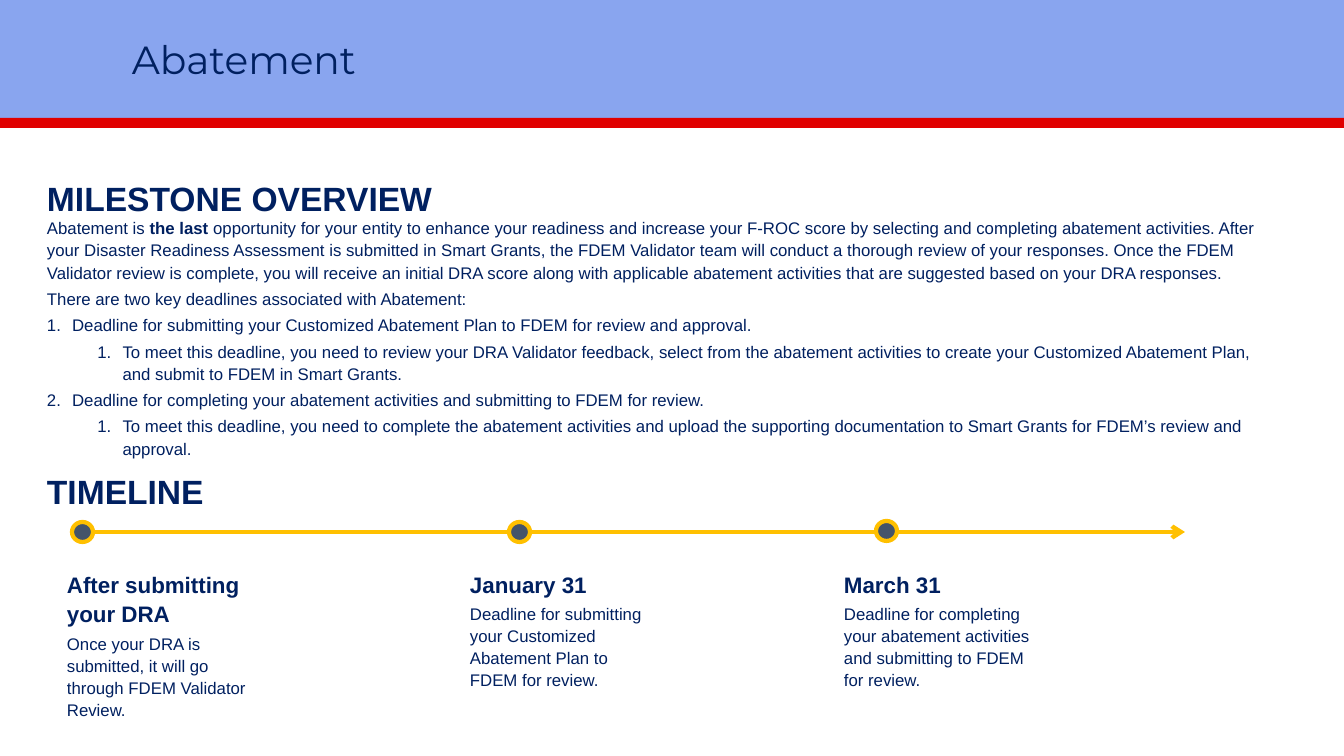
from lxml import etree
from pptx import Presentation
from pptx.dml.color import RGBColor
from pptx.enum.shapes import MSO_CONNECTOR, MSO_SHAPE
from pptx.enum.text import MSO_ANCHOR
from pptx.oxml.ns import qn
from pptx.util import Emu, Pt

RECT, OVAL = MSO_SHAPE.RECTANGLE, MSO_SHAPE.OVAL
LINE = MSO_CONNECTOR.STRAIGHT
MIDDLE = MSO_ANCHOR.MIDDLE
SCALE = 914400 / 100.8
INDENT = 228600
WIDE, HIGH = 1344, 756
COLORS = {"band": "89A5EF", "red": "E00000", "navy": "002060",
          "gold": "FFC000", "slate": "44546A"}

INTRO = [
    "Abatement is ",
    "the last ",
    "opportunity for your entity to enhance your readiness and increase your "
    "F-ROC score by selecting and completing abatement activities. After your "
    "Disaster Readiness Assessment is submitted in Smart Grants, the FDEM "
    "Validator team will conduct a thorough review of your responses. Once the "
    "FDEM Validator review is complete, you will receive an initial DRA score "
    "along with applicable abatement activities that are suggested based on "
    "your DRA responses.",
]
LEAD = "There are two key deadlines associated with Abatement:"
STEPS = [
    (0, "Deadline for submitting your Customized Abatement Plan to FDEM for "
        "review and approval."),
    (1, "To meet this deadline, you need to review your DRA Validator feedback, "
        "select from the abatement activities to create your Customized "
        "Abatement Plan, and submit to FDEM in Smart Grants."),
    (0, "Deadline for completing your abatement activities and submitting to "
        "FDEM for review."),
    (1, "To meet this deadline, you need to complete the abatement activities "
        "and upload the supporting documentation to Smart Grants for FDEM’s "
        "review and approval."),
]
# dot left, dot top, text left, text height, heading, detail
EVENTS = [
    (72, 522, 67, 152, "After submitting your DRA",
     "Once your DRA is submitted, it will go through FDEM Validator Review."),
    (509, 522, 470, 122, "January 31",
     "Deadline for submitting your Customized Abatement Plan to FDEM for review."),
    (876, 521, 844, 122, "March 31",
     "Deadline for completing your abatement activities and submitting to FDEM "
     "for review."),
]


def px(*values):
    return [Emu(round(v * SCALE)) for v in values]


def color(name):
    return RGBColor.from_string(COLORS[name])


def add_shape(slide, kind, box, fill, edge=None):
    shape = slide.shapes.add_shape(kind, *px(*box))
    shape.shadow.inherit = False
    shape.fill.solid()
    shape.fill.fore_color.rgb = color(fill)
    if edge:
        shape.line.color.rgb = color(edge)
        shape.line.width = Pt(3)
    else:
        shape.line.fill.background()


def add_frame(slide, box):
    """Add a wrapping text box without insets and return its frame."""
    frame = slide.shapes.add_textbox(*px(*box)).text_frame
    frame.word_wrap = True
    frame.margin_left = frame.margin_right = 0
    frame.margin_top = frame.margin_bottom = 0
    return frame


def style(para, size, bold=False, after=3, lead=1.1, face="Arial"):
    para.line_spacing = lead
    para.space_after = Pt(after)
    for run in para.runs:
        run.font.name = face
        run.font.size = Pt(size)
        run.font.bold = bold
        run.font.color.rgb = color("navy")


def number(para, level):
    """Turn a paragraph into an item of a numbered list."""
    para.level = level
    props = para._p.get_or_add_pPr()
    props.set("marL", str(INDENT * (1 + 2 * level)))
    props.set("indent", str(-INDENT))
    etree.SubElement(props, qn("a:buAutoNum"), type="arabicPeriod")


def add_title(slide, text):
    box = slide.shapes.add_textbox(*px(122, 22, 1159, 80))
    frame = box.text_frame
    frame.word_wrap = True
    frame.vertical_anchor = MIDDLE
    frame.text = text
    style(frame.paragraphs[0], 28, after=0, lead=0.9, face="Montserrat")


def add_heading(slide, top, text):
    frame = add_frame(slide, (47, top, 461, 41))
    frame.text = text
    style(frame.paragraphs[0], 24, bold=True)


def add_body(slide):
    frame = add_frame(slide, (47, 216, 1227, 251))
    intro = frame.paragraphs[0]
    for part in INTRO:
        intro.add_run().text = part
    style(intro, 12)
    intro.runs[1].font.bold = True
    lead = frame.add_paragraph()
    lead.text = LEAD
    style(lead, 12)
    for level, text in STEPS:
        step = frame.add_paragraph()
        step.text = text
        style(step, 12)
        number(step, level)


def add_arrow(slide):
    arrow = slide.shapes.add_connector(LINE, *px(93, 532, 1185, 532))
    arrow.line.color.rgb = color("gold")
    arrow.line.width = Pt(3)
    etree.SubElement(arrow.line._get_or_add_ln(), qn("a:tailEnd"), type="arrow")
    etree.SubElement(arrow._element.spPr, qn("a:effectLst"))


def add_event(slide, left, top, edge, height, head, detail):
    add_shape(slide, OVAL, (left, top, 21, 20), "slate", "gold")
    frame = add_frame(slide, (edge, 568, 187, height))
    frame.text = head
    style(frame.paragraphs[0], 16, bold=True)
    para = frame.add_paragraph()
    para.text = detail
    style(para, 12, after=6)


def main():
    deck = Presentation()
    deck.slide_width, deck.slide_height = px(WIDE, HIGH)
    slide = deck.slides.add_slide(deck.slide_layouts[6])
    add_shape(slide, RECT, (0, 0, WIDE, 119), "band")
    add_shape(slide, RECT, (0, 118, WIDE, 10), "red")
    add_title(slide, "Abatement")
    add_heading(slide, 174, "MILESTONE OVERVIEW")
    add_body(slide)
    add_heading(slide, 467, "TIMELINE")
    add_arrow(slide)
    for event in EVENTS:
        add_event(slide, *event)
    deck.save("out.pptx")


if __name__ == "__main__":
    main()
